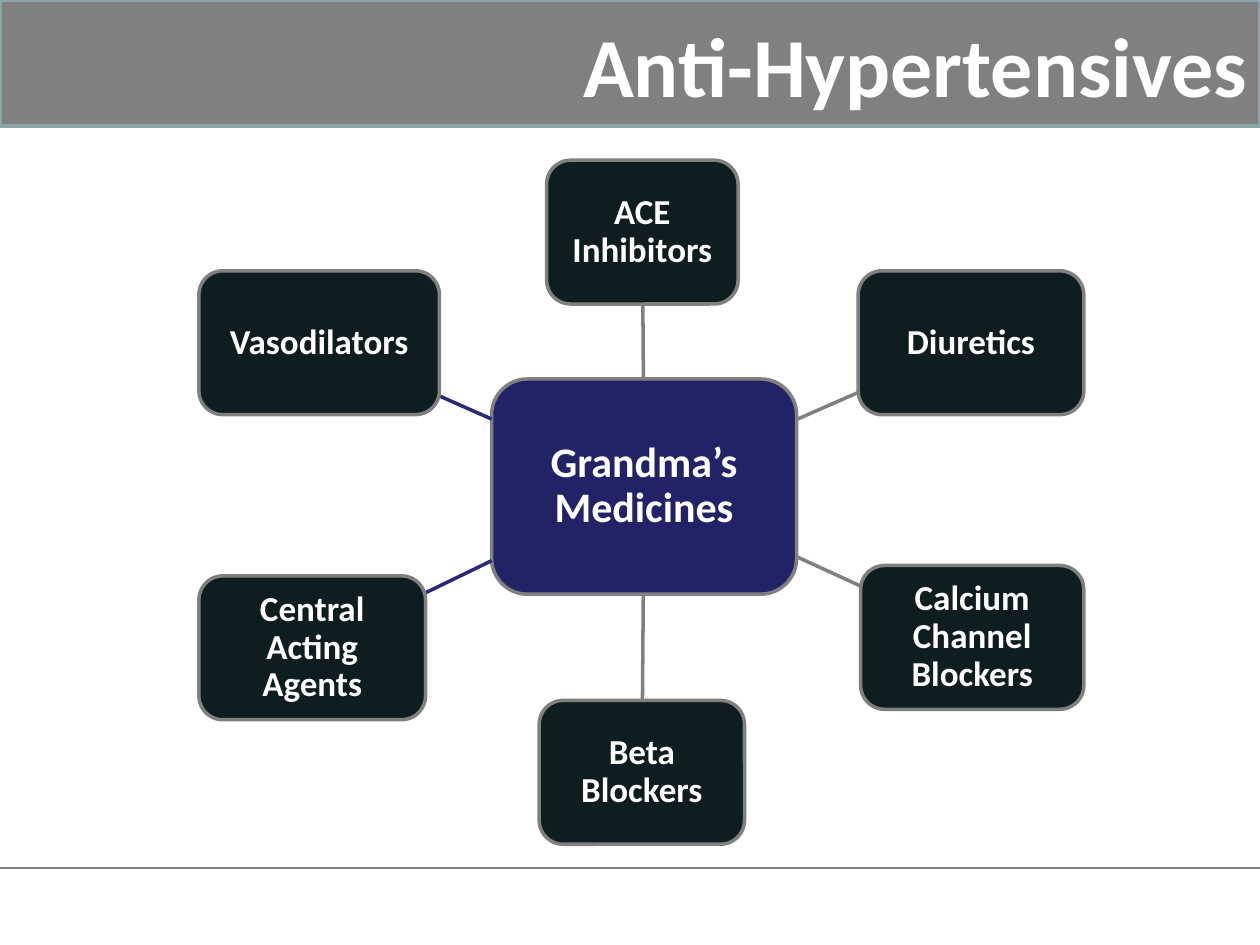
from dataclasses import dataclass

from lxml import etree
from pptx import Presentation
from pptx.dml.color import RGBColor
from pptx.enum.shapes import MSO_CONNECTOR, MSO_SHAPE
from pptx.enum.text import MSO_ANCHOR, PP_ALIGN
from pptx.oxml.ns import qn
from pptx.util import Cm, Pt

RECT = MSO_SHAPE.RECTANGLE
ROUND = MSO_SHAPE.ROUNDED_RECTANGLE
LINE = MSO_CONNECTOR.STRAIGHT
MIDDLE = MSO_ANCHOR.MIDDLE
CENTER = PP_ALIGN.CENTER
RIGHT = PP_ALIGN.RIGHT


@dataclass(frozen=True)
class Theme:
    font: str = "Calibri"
    gray: str = "808080"
    edge: str = "8AA6A8"
    navy: str = "222267"
    blue: str = "29297B"
    dark: str = "0E1E20"
    white: str = "FFFFFF"
    title: int = 48
    hub: int = 24
    node: int = 20
    line: float = 2
    rule: float = 1.5


THEME = Theme()
WIDTH, HEIGHT = 25.4, 19.05
HUB = (9.91, 7.64, 6.15, 4.34)
TALL = 2.9
NODES = [
    ("ACE Inhibitors", 11.02, 3.23, 3.86, THEME.gray),
    ("Diuretics", 17.3, 5.46, 4.55, THEME.gray),
    ("Calcium Channel Blockers", 17.35, 11.4, 4.5, THEME.gray),
    ("Beta Blockers", 10.87, 14.12, 4.14, THEME.gray),
    ("Central Acting Agents", 4.01, 11.61, 4.57, THEME.blue),
    ("Vasodilators", 4.01, 5.46, 4.85, THEME.blue),
]


def apply(target, values):
    for name, value in values.items():
        setattr(target, name, value)


def stroke(line, color, width):
    line.color.rgb = RGBColor.from_string(color)
    line.width = Pt(width)


def add_box(slide, kind, box, fill, edge):
    shape = slide.shapes.add_shape(kind, *map(Cm, box))
    shape.shadow.inherit = False
    shape.fill.solid()
    shape.fill.fore_color.rgb = RGBColor.from_string(fill)
    stroke(shape.line, edge, THEME.line)
    return shape


def write(shape, text, size, align, inset, space):
    frame = shape.text_frame
    apply(frame, {
        "word_wrap": True,
        "vertical_anchor": MIDDLE,
        "margin_left": Cm(inset),
        "margin_right": Cm(inset),
        "margin_top": Cm(inset / 2),
        "margin_bottom": Cm(inset / 2),
    })
    para = frame.paragraphs[0]
    para.text = text
    apply(para, {"alignment": align, "line_spacing": space})
    apply(para.font, {"name": THEME.font, "size": Pt(size), "bold": True})
    para.font.color.rgb = RGBColor.from_string(THEME.white)


def add_line(slide, start, end, color, width):
    line = slide.shapes.add_connector(LINE, *map(Cm, (*start, *end)))
    stroke(line.line, color, width)
    etree.SubElement(line._element.spPr, qn("a:effectLst"))


def center(box):
    left, top, width, height = box
    return left + width / 2, top + height / 2


def border(box, goal):
    x, y = center(box)
    run, rise = goal[0] - x, goal[1] - y
    scale = 1 / max(abs(run) * 2 / box[2], abs(rise) * 2 / box[3])
    return x + run * scale, y + rise * scale


def add_title(slide):
    add_box(slide, RECT, (0, 0, WIDTH, 2.54), THEME.gray, THEME.edge)
    add_line(slide, (0, 17.5), (WIDTH, 17.5), THEME.gray, THEME.rule)
    box = slide.shapes.add_textbox(*map(Cm, (5.28, 0.05, 20.12, 2.49)))
    write(box, "Anti-Hypertensives", THEME.title, RIGHT, 0.25, 1)


def add_node(slide, box, text, fill, size):
    shape = add_box(slide, ROUND, box, fill, THEME.gray)
    write(shape, text, size, CENTER, 0.17, 0.9)


def add_web(slide):
    add_node(slide, HUB, "Grandma’s Medicines", THEME.navy, THEME.hub)
    for text, left, top, width, color in NODES:
        box = (left, top, width, TALL)
        start, end = border(HUB, center(box)), border(box, center(HUB))
        add_line(slide, start, end, color, THEME.line)
        add_node(slide, box, text, THEME.dark, THEME.node)


def main():
    deck = Presentation()
    apply(deck, {"slide_width": Cm(WIDTH), "slide_height": Cm(HEIGHT)})
    slide = deck.slides.add_slide(deck.slide_layouts[6])
    add_title(slide)
    add_web(slide)
    deck.save("out.pptx")


if __name__ == "__main__":
    main()
